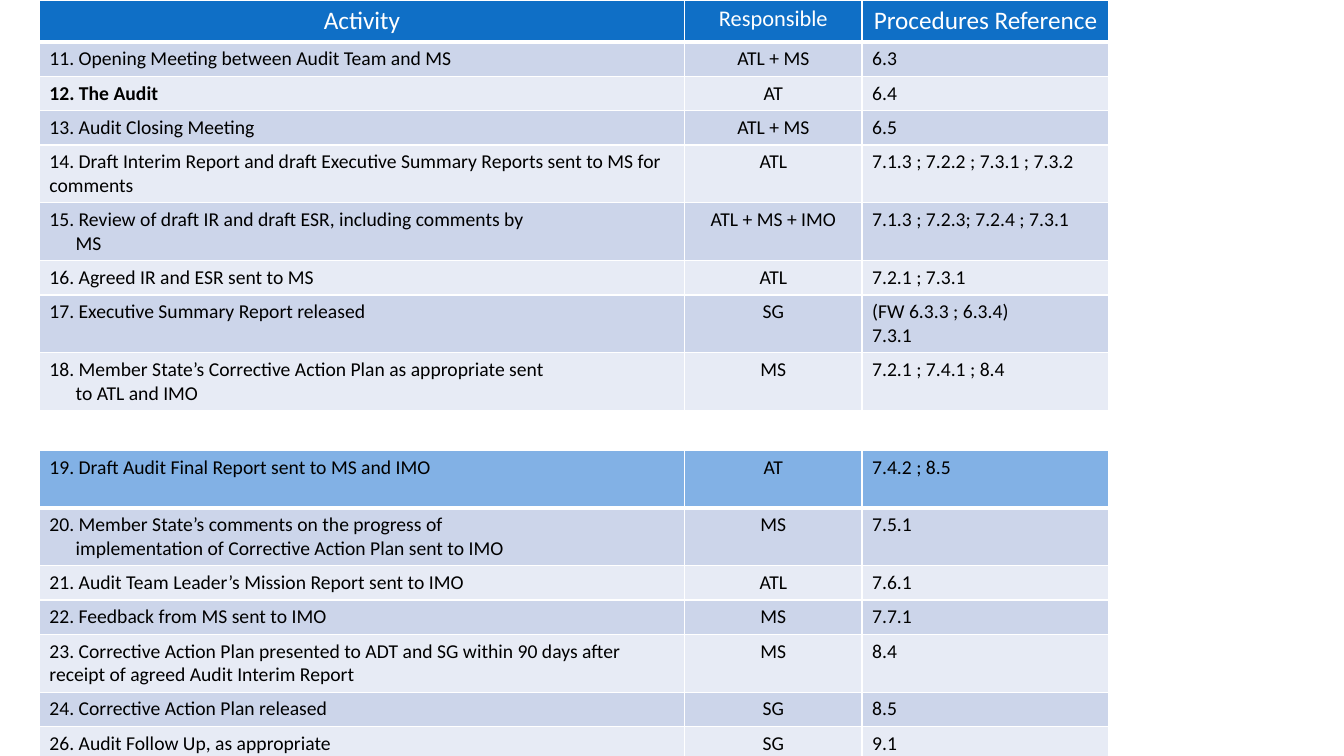
from lxml import etree
from pptx import Presentation
from pptx.dml.color import RGBColor
from pptx.enum.text import PP_ALIGN
from pptx.oxml.ns import qn
from pptx.util import Inches, Pt

LEFT, CENTER = PP_ALIGN.LEFT, PP_ALIGN.CENTER

# A line break inside a cell starts a new paragraph.
AUDIT_ROWS = [
    ("Activity", "Responsible", "Procedures Reference"),
    ("11. Opening Meeting between Audit Team and MS", "ATL + MS", "6.3"),
    ("12. The Audit", "AT", "6.4"),
    ("13. Audit Closing Meeting", "ATL + MS", "6.5"),
    ("14. Draft Interim Report and draft Executive Summary Reports sent to MS for comments",
     "ATL", "7.1.3 ; 7.2.2 ; 7.3.1 ; 7.3.2"),
    ("15. Review of draft IR and draft ESR, including comments by\nMS",
     "ATL + MS + IMO", "7.1.3 ; 7.2.3; 7.2.4 ; 7.3.1"),
    ("16. Agreed IR and ESR sent to MS", "ATL", "7.2.1 ; 7.3.1"),
    ("17. Executive Summary Report released", "SG", "(FW 6.3.3 ; 6.3.4)\n7.3.1"),
    ("18. Member State’s Corrective Action Plan as appropriate sent\nto ATL and IMO",
     "MS", "7.2.1 ; 7.4.1 ; 8.4"),
]
FOLLOW_UP_ROWS = [
    ("19. Draft Audit Final Report sent to MS and IMO", "AT", "7.4.2 ; 8.5"),
    ("20. Member State’s comments on the progress of\n"
     "implementation of Corrective Action Plan sent to IMO", "MS", "7.5.1"),
    ("21. Audit Team Leader’s Mission Report sent to IMO", "ATL", "7.6.1"),
    ("22. Feedback from MS sent to IMO", "MS", "7.7.1"),
    ("23. Corrective Action Plan presented to ADT and SG within 90 days after "
     "receipt of agreed Audit Interim Report", "MS", "8.4"),
    ("24. Corrective Action Plan released", "SG", "8.5"),
    ("26. Audit Follow Up, as appropriate", "SG", "9.1"),
]
BOLD_TEXT = "12. The Audit"

FONT = "Calibri"
WHITE, BLACK = "FFFFFF", "000000"
HEADER_FILL, LEAD_FILL = "0F6FC6", "82B1E5"
BAND_FILLS = ("E7EBF5", "CCD5EA")
HEADER_SIZES = (18, 16, 18)
BODY_SIZES = (14, 14, 14)
BODY_ALIGNMENTS = (LEFT, CENTER, LEFT)

TABLE_LEFT = 0.39
COLUMN_WIDTHS = (6.4, 1.76, 2.45)
HEADER_HEIGHT, ONE_LINE, TWO_LINES = 0.42, 0.34, 0.57
AUDIT_HEIGHTS = [HEADER_HEIGHT, ONE_LINE, ONE_LINE, ONE_LINE, TWO_LINES,
                 TWO_LINES, ONE_LINE, TWO_LINES, TWO_LINES]
FOLLOW_UP_HEIGHTS = [TWO_LINES, TWO_LINES, ONE_LINE, ONE_LINE, TWO_LINES,
                     ONE_LINE, ONE_LINE]
CONTINUATION_INDENT = 0.26


def color(hex_string):
    return RGBColor.from_string(hex_string)


def set_borders(cell, bottom_width):
    """Draw white cell edges, 1 pt except for the bottom one."""
    properties = cell._tc.get_or_add_tcPr()
    for edge, width in (("L", 1), ("R", 1), ("T", 1), ("B", bottom_width)):
        line = etree.SubElement(properties, qn(f"a:ln{edge}"), w=str(Pt(width)))
        fill = etree.SubElement(line, qn("a:solidFill"))
        etree.SubElement(fill, qn("a:srgbClr"), val=WHITE)


def fill_cell(cell, text, size, alignment, text_color, indent):
    frame = cell.text_frame
    for number, line in enumerate(text.split("\n")):
        paragraph = frame.add_paragraph() if number else frame.paragraphs[0]
        paragraph.alignment = alignment
        if number and indent:
            paragraph._p.get_or_add_pPr().set("marL", str(Inches(indent)))
        run = paragraph.add_run()
        run.text = line
        run.font.name = FONT
        run.font.size = Pt(size)
        run.font.bold = text == BOLD_TEXT
        run.font.color.rgb = color(text_color)


def add_activity_table(slide, top, rows, heights, first_fill, first_color,
                       first_sizes, first_alignments):
    table = slide.shapes.add_table(
        len(rows), len(COLUMN_WIDTHS), Inches(TABLE_LEFT), Inches(top),
        Inches(sum(COLUMN_WIDTHS)), Inches(sum(heights))).table
    for column, width in zip(table.columns, COLUMN_WIDTHS):
        column.width = Inches(width)
    for row_index, (texts, height) in enumerate(zip(rows, heights)):
        table.rows[row_index].height = Inches(height)
        is_first = row_index == 0
        fill = first_fill if is_first else BAND_FILLS[row_index % 2]
        text_color = first_color if is_first else BLACK
        sizes = first_sizes if is_first else BODY_SIZES
        alignments = first_alignments if is_first else BODY_ALIGNMENTS
        for column_index, text in enumerate(texts):
            cell = table.cell(row_index, column_index)
            set_borders(cell, 3 if is_first else 1)
            cell.fill.solid()
            cell.fill.fore_color.rgb = color(fill)
            indent = CONTINUATION_INDENT if column_index == 0 else 0
            fill_cell(cell, text, sizes[column_index], alignments[column_index],
                      text_color, indent)


def main():
    presentation = Presentation()
    presentation.slide_width = Inches(13.33)
    presentation.slide_height = Inches(7.5)
    slide = presentation.slides.add_slide(presentation.slide_layouts[6])
    add_activity_table(slide, 0, AUDIT_ROWS, AUDIT_HEIGHTS, HEADER_FILL, WHITE,
                       HEADER_SIZES, (CENTER, CENTER, CENTER))
    add_activity_table(slide, 4.47, FOLLOW_UP_ROWS, FOLLOW_UP_HEIGHTS, LEAD_FILL,
                       BLACK, BODY_SIZES, BODY_ALIGNMENTS)
    presentation.save("out.pptx")


if __name__ == "__main__":
    main()
